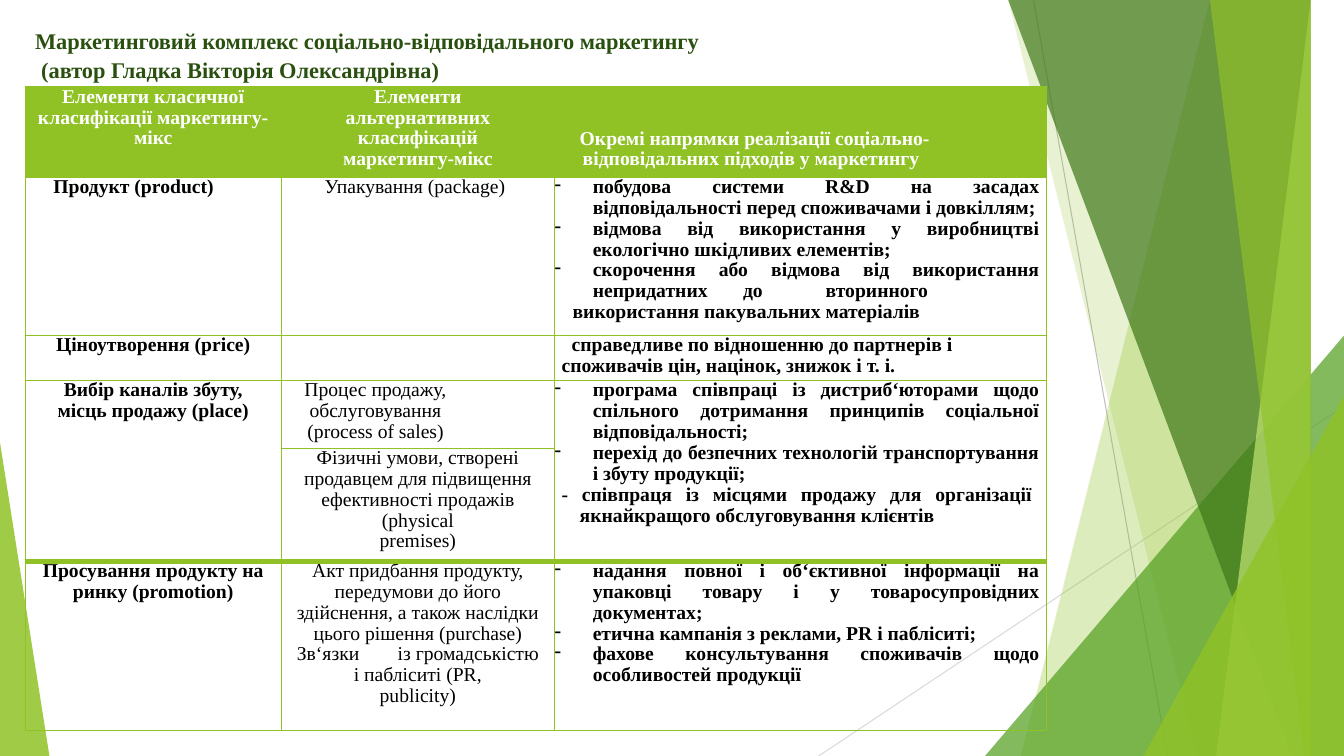
"""Build the slide on the socially responsible marketing mix."""
from lxml.etree import SubElement
from pptx import Presentation
from pptx.dml.color import RGBColor
from pptx.enum.shapes import MSO_CONNECTOR, MSO_SHAPE
from pptx.enum.text import MSO_ANCHOR, PP_ALIGN
from pptx.oxml.ns import qn
from pptx.util import Emu, Inches, Pt

WIDE, HIGH = 13.33, 7.5
HUES = {"lime": "90C226", "leaf": "54A021", "moss": "3F7819", "pale": "C0E474",
        "pine": "2A5010", "white": "FFFFFF", "black": "000000",
        "grey": "BFBFBF", "mist": "D9D9D9"}
FONT = "Times New Roman"

RAYS = [((10.25, 0), (11.58, HIGH), "grey"), ((WIDE, 4.03), (8.12, HIGH), "mist")]
BANDS = [("band", 12.28, 10.04, "lime", 30), ("band", 10.5, 11.83, "lime", 20),
         ("peak", 9.77, 3.56, 4.17, 1, "leaf", 72),
         ("band", 10.21, 12.91, "moss", 70), ("band", 13.03, 11.92, "pale", 70),
         ("band", 11.96, 13.18, "lime", 65),
         ("peak", 11.34, 1.99, 3.57, 1, "lime", 80),
         ("peak", 0, 0.49, 3.11, 0, "lime", 85)]

TITLE = [("Маркетинговий комплекс cоціально-відповідального маркетингу", {}),
         ("(автор Гладка Вікторія Олександрівна)", {"first": 0.06})]


def mid(text, side, **more):
    return text, {"align": PP_ALIGN.CENTER, "left": side, "right": side, **more}


def item(text, *tabs, **more):
    return text, {"align": PP_ALIGN.JUSTIFY, "left": 0.38, "first": -0.38,
                  "right": 0.07, "mark": "-", "tabs": tabs or (0.18,), **more}


COLS = [2.54, 2.71, 4.88]
ROWS = [0.84, 1.51, 0.42, 0.63, 1.05, 1.68]
GRID = [
    [[mid("Елементи класичної класифікації маркетингу-", 0.12), mid("мікс", 0.12)],
     [mid("Елементи альтернативних класифікацій маркетингу-мікс", 0.26)],
     [("Окремі напрямки реалізації соціально- відповідальних підходів у маркетингу",
       {"left": 0.28, "first": -0.03})]],
    [[("Продукт (product)", {"left": 0.28})],
     [("Упакування (рackage)", {"left": 0.43})],
     [item("побудова системи R&D на засадах відповідальності перед споживачами і довкіллям;"),
      item("відмова від використання у виробництві екологічно шкідливих елементів;"),
      item("скорочення або відмова від використання непридатних\tдо\tвторинного",
           0.18, 1.87, 2.69),
      ("використання пакувальних матеріалів", {"left": 0.18})]],
    [[mid("Ціноутворення (price)", 0.1)],
     [],
     [("справедливе по відношенню до партнерів і споживачів цін, націнок, знижок і т. і.",
       {"left": 0.07, "first": 0.1})]],
    [[mid("Вибір каналів збуту, місць продажу (place)", 0.13)],
     [("Процес продажу, обслуговування", {"left": 0.28, "first": -0.05}),
      ("(рrocess of sales)", {"left": 0.26})],
     [item("програма співпраці із дистриб‘юторами щодо спільного дотримання "
           "принципів соціальної відповідальності;"),
      item("перехід до безпечних технологій транспортування і збуту продукції;"),
      item("- співпраця із місцями продажу для організації\t"
           "якнайкращого обслуговування клієнтів", 2.47,
           left=0.25, first=-0.18, right=0.1, mark=None, above=0.5)]],
    [[],
     [mid("Фізичні умови, створені продавцем для підвищення ефективності "
          "продажів (physical", 0.12), mid("premises)", 0.27)],
     []],
    [[mid("Просування продукту на ринку (promotion)", 0.13)],
     [mid("Акт придбання продукту, передумови до його здійснення, а також "
          "наслідки цього рішення (purchase)", 0.11),
      mid("Зв‘язки\tіз громадськістю і пабліситі (PR,", 0.11), mid("publicity)", 0.11)],
     [item("надання повної і об‘єктивної інформації на упаковці товару і у "
           "товаросупровідних документах;", 0.2),
      item("етична кампанія з реклами, PR і пабліситі;", 0.2),
      item("фахове консультування споживачів щодо особливостей продукції", 0.2)]],
]


def tint(name):
    return RGBColor.from_string(HUES[name])


def write(para, text, size=14, hue="black", bold=True, align=PP_ALIGN.LEFT,
          left=0, right=0, first=0, above=0, pitch=0.96, mark=None, tabs=()):
    para.alignment, para.line_spacing = align, pitch
    para.space_before = Pt(above)
    props = para._p.get_or_add_pPr()
    for key, size_in in (("marL", left), ("marR", right), ("indent", first)):
        props.set(key, str(Inches(size_in)))
    if mark:
        SubElement(props, qn("a:buChar"), char=mark)
    if tabs:
        stops = SubElement(props, qn("a:tabLst"))
        for tab in tabs:
            SubElement(stops, qn("a:tab"), pos=str(Inches(tab)), algn="l")
    run = para.add_run()
    run.text = text
    font = run.font
    font.name, font.size, font.bold = FONT, Pt(size), bold
    font.color.rgb = tint(hue)


def fill_text(frame, lines, **form):
    for n, (text, own) in enumerate(lines):
        para = frame.add_paragraph() if n else frame.paragraphs[0]
        write(para, text, **{**form, **own})


def paint(shape, hue, alpha):
    shape.shadow.inherit = False
    shape.fill.solid()
    shape.fill.fore_color.rgb = tint(hue)
    shape.line.fill.background()
    code = shape._element.spPr.find(qn("a:solidFill"))[0]
    SubElement(code, qn("a:alpha"), val=str(alpha * 1000))


def add_ray(shapes, start, end, hue):
    ray = shapes.add_connector(MSO_CONNECTOR.STRAIGHT, *map(Inches, start + end))
    ray.line.color.rgb, ray.line.width = tint(hue), Pt(0.75)
    SubElement(ray._element.spPr, qn("a:effectLst"))


def add_band(shapes, top, base, hue, alpha):
    path = shapes.build_freeform(top, 0, scale=Inches(1))
    path.add_line_segments([(WIDE, 0), (WIDE, HIGH), (base, HIGH)], close=True)
    paint(path.convert_to_shape(), hue, alpha)


def add_peak(shapes, left, width, height, lean, hue, alpha):
    box = map(Inches, (left, HIGH - height, width, height))
    peak = shapes.add_shape(MSO_SHAPE.ISOSCELES_TRIANGLE, *box)
    peak.adjustments[0] = lean
    paint(peak, hue, alpha)


def edge(cell, **widths):
    props = cell._tc.get_or_add_tcPr()
    for side in "LRTB":
        line = SubElement(props, qn(f"a:ln{side}"), w=str(Pt(widths.get(side, 1))))
        paper = SubElement(line, qn("a:solidFill"))
        SubElement(paper, qn("a:srgbClr"), val=HUES["lime"])


def add_grid(shapes):
    frame = shapes.add_table(len(ROWS), len(COLS), *map(Inches, (0.25, 0.86, sum(COLS), 6.58)))
    table = frame.table
    table.first_row = table.horz_banding = False
    for col, width in zip(table.columns, COLS):
        col.width = Inches(width)
    for row, height in zip(table.rows, ROWS):
        row.height = Inches(height)
    frame.height = Inches(6.58)
    last = len(ROWS) - 1
    for r, row in enumerate(GRID):
        for c, lines in enumerate(row):
            cell = table.cell(r, c)
            cell.margin_left = cell.margin_right = cell.margin_top = cell.margin_bottom = Emu(0)
            thick = {"T": 4} if r == last else {"B": 4} if r == last - 1 else {}
            if r == last - 2 and c != 1:
                thick = {"B": 4}
            edge(cell, **thick)
            if r:
                cell.fill.background()
            else:
                cell.fill.solid()
                cell.fill.fore_color.rgb = tint("lime")
            fill_text(cell.text_frame, lines, hue="black" if r else "white",
                      bold=c != 1 or r == 0)
    for c in (0, 2):
        table.cell(3, c).merge(table.cell(4, c))
    head = table.cell(0, 2)
    head.vertical_anchor, head.margin_bottom = MSO_ANCHOR.BOTTOM, Inches(0.07)


def main():
    deck = Presentation()
    deck.slide_width, deck.slide_height = Inches(WIDE), Inches(HIGH)
    shapes = deck.slides.add_slide(deck.slide_layouts[6]).shapes
    for ray in RAYS:
        add_ray(shapes, *ray)
    for kind, *form in BANDS:
        (add_band if kind == "band" else add_peak)(shapes, *form)
    title = shapes.add_textbox(*map(Inches, (0.25, 0.22, 8.85, 0.64))).text_frame
    title.word_wrap, title.vertical_anchor = True, MSO_ANCHOR.MIDDLE
    fill_text(title, TITLE, size=16, hue="pine", pitch=1.05)
    add_grid(shapes)
    deck.save("out.pptx")


if __name__ == "__main__":
    main()
